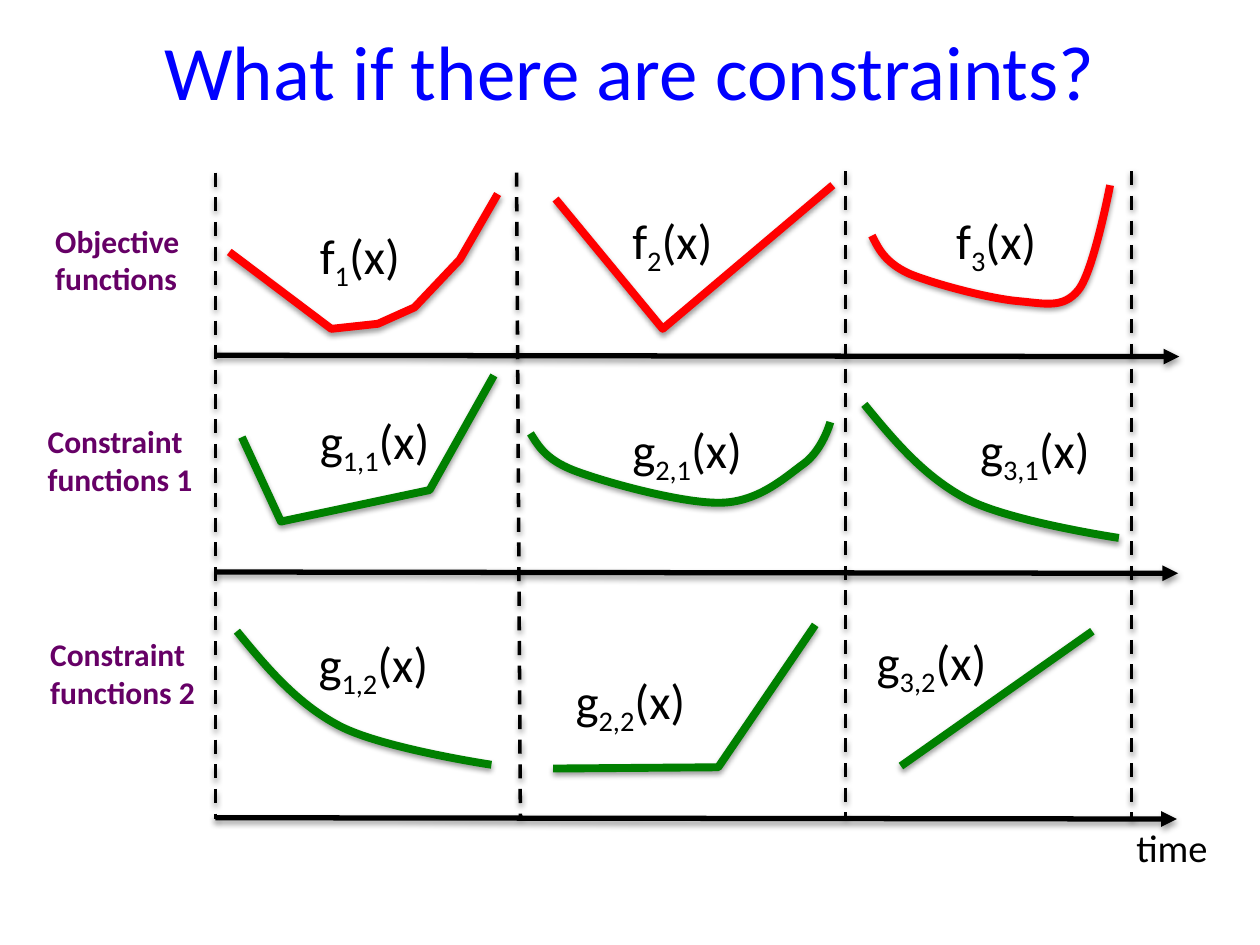
from dataclasses import dataclass

import lxml.etree
import pptx
import pptx.dml.color
import pptx.enum.dml
import pptx.enum.shapes
import pptx.enum.text
import pptx.oxml
import pptx.oxml.ns
import pptx.util

Inches = pptx.util.Inches
qn = pptx.oxml.ns.qn
Point = tuple[float, float]

FONT = "Calibri"
COLORS = {
    "title": "0000FF",
    "text": "000000",
    "axis": "000000",
    "row": "660066",
    "objective": "FF0000",
    "constraint": "008000",
}


@dataclass
class Curve:
    """An open outline; a smooth one lists two control points before each end point."""
    color: str
    points: list[Point]
    smooth: bool = False


@dataclass
class FunctionLabel:
    letter: str
    index: str
    left: float
    top: float
    width: float


@dataclass
class RowLabel:
    lines: tuple[str, str]
    left: float
    top: float
    width: float


DECAY = [(6.86, 3.21), (7.09, 3.49), (7.33, 3.78), (7.67, 3.96),
         (8.01, 4.14), (8.88, 4.27), (8.88, 4.27)]
CURVES = [
    Curve("objective", [(1.82, 2), (2.63, 2.61), (3, 2.57), (3.29, 2.44),
                        (3.65, 2.06), (3.95, 1.54)]),
    Curve("objective", [(4.41, 1.58), (5.26, 2.61), (6.61, 1.47)]),
    Curve("objective", [(6.92, 1.87), (6.97, 1.97), (7.02, 2.08), (7.21, 2.17),
                        (7.4, 2.25), (7.85, 2.37), (8.08, 2.39),
                        (8.3, 2.41), (8.44, 2.45), (8.56, 2.3),
                        (8.68, 2.15), (8.81, 1.47), (8.81, 1.47)], True),
    Curve("constraint", [(1.92, 3.47), (2.23, 4.14), (3.41, 3.89), (3.92, 2.98)]),
    Curve("constraint", [(4.21, 3.44), (4.28, 3.55), (4.34, 3.66), (4.6, 3.75),
                         (4.85, 3.84), (5.44, 4), (5.73, 3.99),
                         (6.03, 3.98), (6.24, 3.78), (6.38, 3.68),
                         (6.53, 3.57), (6.59, 3.35), (6.59, 3.35)], True),
    Curve("constraint", DECAY, True),
    Curve("constraint", [(x - 4.98, y + 1.8) for x, y in DECAY], True),
    Curve("constraint", [(4.39, 6.1), (5.7, 6.09), (6.47, 4.96)]),
]
TIME_AXES = [((1.72, 2.82), (9.36, 2.83)), ((1.71, 4.54), (9.35, 4.55)),
             ((1.71, 6.49), (9.34, 6.5))]
TIME_STEPS = [((1.71, 1.37), (1.71, 6.5)), ((4.1, 1.37), (4.13, 6.49)),
              ((6.71, 1.36), (6.71, 6.49)), ((8.98, 1.36), (8.98, 6.5))]
FUNCTION_LABELS = [
    FunctionLabel("f", "1", 2.44, 1.74, 0.86),
    FunctionLabel("f", "2", 4.92, 1.62, 0.86),
    FunctionLabel("f", "3", 7.49, 1.62, 0.86),
    FunctionLabel("g", "1,1", 2.44, 3.21, 1.13),
    FunctionLabel("g", "2,1", 4.92, 3.28, 1.13),
    FunctionLabel("g", "3,1", 7.68, 3.28, 1.13),
    FunctionLabel("g", "1,2", 2.43, 4.98, 1.13),
    FunctionLabel("g", "2,2", 4.47, 5.27, 1.13),
    FunctionLabel("g", "3,2", 6.86, 4.96, 1.13),
]
ROW_LABELS = [
    RowLabel(("Objective", "functions"), 0.34, 1.71, 1.2),
    RowLabel(("Constraint", "functions 1"), 0.28, 3.3, 1.36),
    RowLabel(("Constraint", "functions 2"), 0.3, 4.99, 1.37),
]


def rgb(name: str) -> pptx.dml.color.RGBColor:
    return pptx.dml.color.RGBColor.from_string(COLORS[name])


def style_line(shape, color: str, width: float) -> None:
    """Set the stroke and the soft shadow below it."""
    shape.line.color.rgb = rgb(color)
    shape.line.width = pptx.util.Pt(width)
    shape._element.spPr.append(pptx.oxml.parse_xml(
        f'<a:effectLst {pptx.oxml.ns.nsdecls("a")}>'
        '<a:outerShdw blurRad="40000" dist="20000" dir="5400000" rotWithShape="0">'
        '<a:srgbClr val="000000"><a:alpha val="38000"/></a:srgbClr>'
        '</a:outerShdw></a:effectLst>'))


def add_line(slide, start: Point, end: Point, color: str, width: float):
    line = slide.shapes.add_connector(
        pptx.enum.shapes.MSO_CONNECTOR.STRAIGHT,
        *(Inches(value) for value in (*start, *end)))
    style_line(line, color, width)
    return line


def add_time_axis(slide, start: Point, end: Point) -> None:
    axis = add_line(slide, start, end, "axis", 3)
    stroke = axis._element.spPr.find(qn("a:ln"))
    lxml.etree.SubElement(stroke, qn("a:tailEnd"), type="triangle")


def add_curve(slide, curve: Curve) -> None:
    points = [(Inches(x), Inches(y)) for x, y in curve.points]
    builder = slide.shapes.build_freeform(*points[0])
    builder.add_line_segments(points[1:], close=False)
    shape = builder.convert_to_shape()
    shape.fill.background()
    style_line(shape, curve.color, 4.5)
    if curve.smooth:
        bend_segments(shape)


def bend_segments(shape) -> None:
    """Turn every three straight segments into one cubic Bézier segment."""
    segments = list(shape._element.iter(qn("a:lnTo")))
    for first in range(0, len(segments), 3):
        bezier = lxml.etree.Element(qn("a:cubicBezTo"))
        segments[first].addprevious(bezier)
        for segment in segments[first:first + 3]:
            bezier.append(segment[0])
            segment.getparent().remove(segment)


def add_text_box(slide, left: float, top: float, width: float, height: float,
                 wrap: bool = False):
    box = slide.shapes.add_textbox(
        Inches(left), Inches(top), Inches(width), Inches(height))
    box.text_frame.word_wrap = wrap
    return box.text_frame


def add_run(paragraph, text: str, size: float, color: str, bold: bool = False):
    run = paragraph.add_run()
    run.text = text
    run.font.name = FONT
    run.font.size = pptx.util.Pt(size)
    run.font.bold = bold
    run.font.color.rgb = rgb(color)
    return run


def add_function_label(slide, label: FunctionLabel) -> None:
    frame = add_text_box(slide, label.left, label.top, label.width, 0.57)
    paragraph = frame.paragraphs[0]
    add_run(paragraph, label.letter, 28, "text")
    index = add_run(paragraph, label.index, 28, "text")
    index.font._element.set("baseline", "-25000")
    add_run(paragraph, "(x)", 28, "text")


def add_row_label(slide, label: RowLabel) -> None:
    frame = add_text_box(slide, label.left, label.top, label.width, 0.71)
    add_run(frame.paragraphs[0], label.lines[0], 18, "row", True)
    add_run(frame.add_paragraph(), label.lines[1], 18, "row", True)


def main() -> None:
    presentation = pptx.Presentation()
    presentation.slide_width = Inches(10)
    presentation.slide_height = Inches(7.5)
    slide = presentation.slides.add_slide(presentation.slide_layouts[6])

    title = add_text_box(slide, 0.5, -0.07, 9, 1.25, wrap=True)
    title.vertical_anchor = pptx.enum.text.MSO_ANCHOR.MIDDLE
    title.paragraphs[0].alignment = pptx.enum.text.PP_ALIGN.CENTER
    add_run(title.paragraphs[0], "What if there are constraints?", 44, "title")

    for start, end in TIME_AXES:
        add_time_axis(slide, start, end)
    for start, end in TIME_STEPS:
        step = add_line(slide, start, end, "axis", 2)
        step.line.dash_style = pptx.enum.dml.MSO_LINE.DASH
    for curve in CURVES:
        add_curve(slide, curve)
    add_line(slide, (7.15, 6.08), (8.67, 5.01), "constraint", 4.5)

    for label in FUNCTION_LABELS:
        add_function_label(slide, label)
    for label in ROW_LABELS:
        add_row_label(slide, label)
    time = add_text_box(slide, 8.92, 6.49, 0.85, 0.47, wrap=True)
    add_run(time.paragraphs[0], "time", 22, "text")

    presentation.save("out.pptx")


if __name__ == "__main__":
    main()
